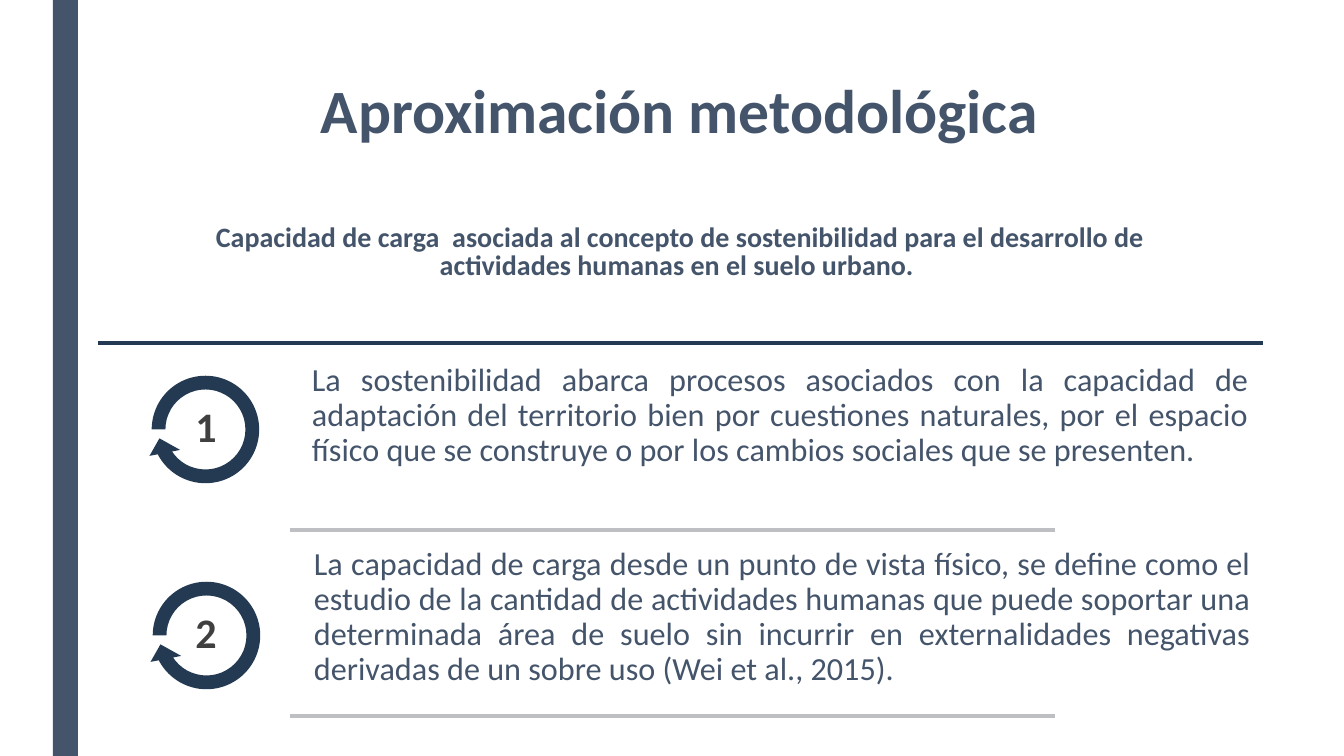
from lxml.etree import SubElement
from pptx import Presentation
from pptx.dml.color import RGBColor
from pptx.enum.shapes import MSO_CONNECTOR, MSO_SHAPE
from pptx.enum.text import MSO_ANCHOR, MSO_AUTO_SIZE, PP_ALIGN
from pptx.oxml.ns import qn
from pptx.util import Emu, Pt

PX_PER_INCH = 100.8
FONT = "Calibri"
SLATE, NAVY, GREY, CHARCOAL = "44546A", "243A52", "BEBFC3", "404040"

TITLE = "Aproximación metodológica"
SUBTITLE = ("Capacidad de carga  asociada al concepto de sostenibilidad para el "
            "desarrollo de actividades humanas en el suelo urbano. ")
# Each point: text left, text top, arrow left, arrow top, separator y, wording
POINTS = [
    (302, 354, 143, 367, 530,
     "La sostenibilidad abarca procesos asociados con la capacidad de adaptación "
     "del territorio bien por cuestiones naturales, por el espacio físico que se "
     "construye o por los cambios sociales que se presenten."),
    (304, 538, 144, 573, 716,
     "La capacidad de carga desde un punto de vista físico, se define como el "
     "estudio de la cantidad de actividades humanas que puede soportar una "
     "determinada área de suelo sin incurrir en externalidades negativas "
     "derivadas de un sobre uso (Wei et al., 2015)."),
]


def px(length):
    return Emu(round(length * 914400 / PX_PER_INCH))


def color(hex_string):
    return RGBColor.from_string(hex_string)


def write_text(shape, text, size, hex_color, align, spacing, bold=False,
               anchor=MSO_ANCHOR.TOP):
    text_frame = shape.text_frame
    text_frame.text = text
    text_frame.word_wrap = True
    text_frame.auto_size = MSO_AUTO_SIZE.NONE
    text_frame.vertical_anchor = anchor
    paragraph = text_frame.paragraphs[0]
    paragraph.alignment = align
    paragraph.line_spacing = spacing
    paragraph.space_before = Pt(0)
    font = paragraph.runs[0].font
    font.name, font.size, font.bold = FONT, Pt(size), bold
    font.color.rgb = color(hex_color)


def place(shape, left, top, width, height):
    shape.left, shape.top = px(left), px(top)
    shape.width, shape.height = px(width), px(height)


def remove_bullet(paragraph):
    properties = paragraph._p.get_or_add_pPr()
    properties.set("marL", "0")
    properties.set("indent", "0")
    SubElement(properties, qn("a:buNone"))


def add_filled_shape(slide, kind, left, top, width, height, hex_color):
    shape = slide.shapes.add_shape(kind, px(left), px(top), px(width), px(height))
    shape.shadow.inherit = False
    shape.fill.solid()
    shape.fill.fore_color.rgb = color(hex_color)
    shape.line.fill.background()
    return shape


def add_rule(slide, left, right, y, hex_color):
    connector = slide.shapes.add_connector(
        MSO_CONNECTOR.STRAIGHT, px(left), px(y), px(right), px(y))
    connector.line.color.rgb = color(hex_color)
    connector.line.width = Pt(2.75)
    SubElement(connector._element.spPr, qn("a:effectLst"))


def add_text(slide, left, top, width, height, inset, *text_options, **more_options):
    box = slide.shapes.add_textbox(px(left), px(top), px(width), px(height))
    text_frame = box.text_frame
    text_frame.margin_left = text_frame.margin_right = px(inset)
    text_frame.margin_top = text_frame.margin_bottom = px(inset)
    write_text(box, *text_options, **more_options)


def add_number_badge(slide, number, left, top):
    arrow = add_filled_shape(slide, MSO_SHAPE.CIRCULAR_ARROW,
                             left, top, 125, 125, NAVY)
    for index, value in enumerate((0.11, 11.423, 90, 108, 0.125)):
        arrow.adjustments[index] = value
    add_text(slide, 171, top + 45, 70, 34, 2, str(number), 30, CHARCOAL,
             PP_ALIGN.CENTER, 0.9, bold=True, anchor=MSO_ANCHOR.MIDDLE)


def main():
    presentation = Presentation()
    presentation.slide_width, presentation.slide_height = px(1344), px(756)
    slide = presentation.slides.add_slide(presentation.slide_layouts[1])

    # Side bar
    add_filled_shape(slide, MSO_SHAPE.RECTANGLE, 53, 0, 25, 756, SLATE)

    # Title and subtitle
    title, subtitle = slide.shapes.title, slide.placeholders[1]
    place(title, 151, 76, 1058, 88)
    write_text(title, TITLE, 44, SLATE, PP_ALIGN.CENTER, 0.89, bold=True)
    place(subtitle, 151, 220, 1058, 73)
    write_text(subtitle, SUBTITLE, 20, SLATE, PP_ALIGN.CENTER, 0.84, bold=True)
    remove_bullet(subtitle.text_frame.paragraphs[0])

    # Numbered points under the heading rule
    add_rule(slide, 98, 1263, 343, NAVY)
    for number, point in enumerate(POINTS, start=1):
        text_left, text_top, arrow_left, arrow_top, rule_y, wording = point
        add_text(slide, text_left, text_top, 958, 177, 10, wording, 23, SLATE,
                 PP_ALIGN.JUSTIFY, 0.9)
        add_rule(slide, 290, 1055, rule_y, GREY)
        add_number_badge(slide, number, arrow_left, arrow_top)

    presentation.save("out.pptx")


if __name__ == "__main__":
    main()
